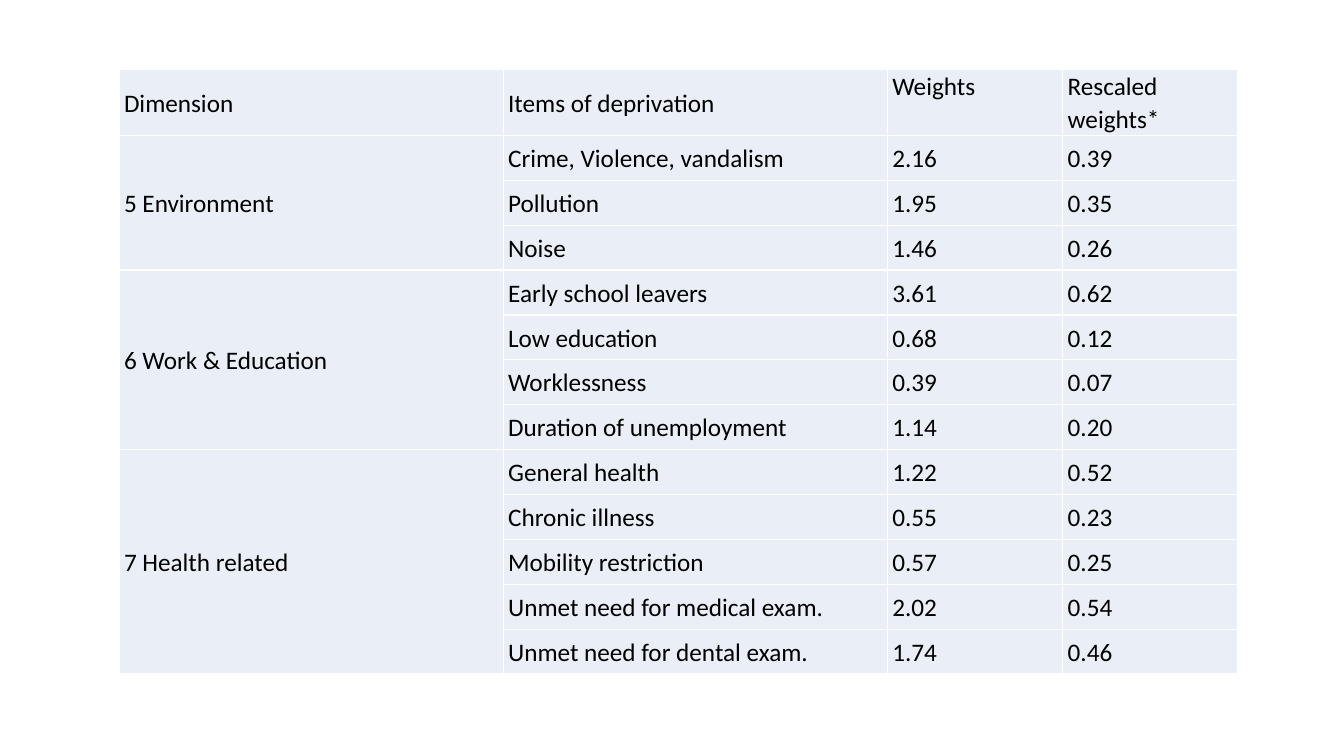
from dataclasses import dataclass

from lxml.etree import SubElement
from pptx import Presentation
from pptx.dml.color import RGBColor
from pptx.enum.text import MSO_ANCHOR, PP_ALIGN
from pptx.oxml.ns import qn
from pptx.util import Inches, Pt


@dataclass(frozen=True)
class Theme:
    font: str = "Calibri"
    size: int = 18
    ink: str = "000000"
    fill: str = "EAEFF7"
    rule: str = "FFFFFF"


THEME = Theme()
HEADS = ["Dimension", "Items of deprivation", "Weights", "Rescaled weights*"]
GROUPS = {
    "5 Environment": [
        ("Crime, Violence, vandalism", "2.16", "0.39"),
        ("Pollution", "1.95", "0.35"),
        ("Noise", "1.46", "0.26"),
    ],
    "6 Work & Education": [
        ("Early school leavers", "3.61", "0.62"),
        ("Low education", "0.68", "0.12"),
        ("Worklessness", "0.39", "0.07"),
        ("Duration of unemployment", "1.14", "0.20"),
    ],
    "7 Health related": [
        ("General health", "1.22", "0.52"),
        ("Chronic illness", "0.55", "0.23"),
        ("Mobility restriction", "0.57", "0.25"),
        ("Unmet need for medical exam.", "2.02", "0.54"),
        ("Unmet need for dental exam.", "1.74", "0.46"),
    ],
}
WIDTHS = [3.81, 3.81, 1.74, 1.74]


def add_rules(cell):
    """Draw a thin line on all four sides of a cell, ahead of its fill."""
    props = cell._tc.get_or_add_tcPr()
    for side in ("lnL", "lnR", "lnT", "lnB"):
        line = SubElement(props, qn(f"a:{side}"), w=str(Pt(1)))
        solid = SubElement(line, qn("a:solidFill"))
        SubElement(solid, qn("a:srgbClr"), val=THEME.rule)


def style_cell(cell):
    add_rules(cell)
    cell.fill.solid()
    cell.fill.fore_color.rgb = RGBColor.from_string(THEME.fill)
    cell.margin_left = cell.margin_right = Inches(0.05)
    cell.margin_top = cell.margin_bottom = 0
    cell.vertical_anchor = MSO_ANCHOR.MIDDLE


def write_cell(cell, text, align=PP_ALIGN.JUSTIFY):
    para = cell.text_frame.paragraphs[0]
    para.alignment = align
    para.line_spacing = 1.07
    para.space_after = Pt(6)
    run = para.add_run()
    run.text = text
    run.font.name = THEME.font
    run.font.size = Pt(THEME.size)
    run.font.color.rgb = RGBColor.from_string(THEME.ink)


def add_grid(slide):
    count = 1 + sum(len(items) for items in GROUPS.values())
    frame = slide.shapes.add_table(
        count, len(HEADS), Inches(1.18), Inches(0.69), Inches(11.1), Inches(5.79)
    )
    table = frame.table
    table.first_row = table.horz_banding = False
    for column, width in zip(table.columns, WIDTHS):
        column.width = Inches(width)
    for cell in table.iter_cells():
        style_cell(cell)
    return table


def fill_heads(table):
    for col, head in enumerate(HEADS):
        write_cell(table.cell(0, col), head, PP_ALIGN.JUSTIFY if col else PP_ALIGN.LEFT)
    for col in (2, 3):
        table.cell(0, col).vertical_anchor = MSO_ANCHOR.TOP


def fill_groups(table):
    """Merge the first column over each dimension and list its items beside it."""
    top = 1
    for name, items in GROUPS.items():
        first = table.cell(top, 0)
        first.merge(table.cell(top + len(items) - 1, 0))
        write_cell(first, name, PP_ALIGN.LEFT)
        for row, item in enumerate(items, top):
            for col, text in enumerate(item, 1):
                write_cell(table.cell(row, col), text)
        top += len(items)


def main():
    deck = Presentation()
    deck.slide_width, deck.slide_height = Inches(13.33), Inches(7.5)
    slide = deck.slides.add_slide(deck.slide_layouts[6])
    table = add_grid(slide)
    fill_heads(table)
    fill_groups(table)
    deck.save("out.pptx")


if __name__ == "__main__":
    main()
